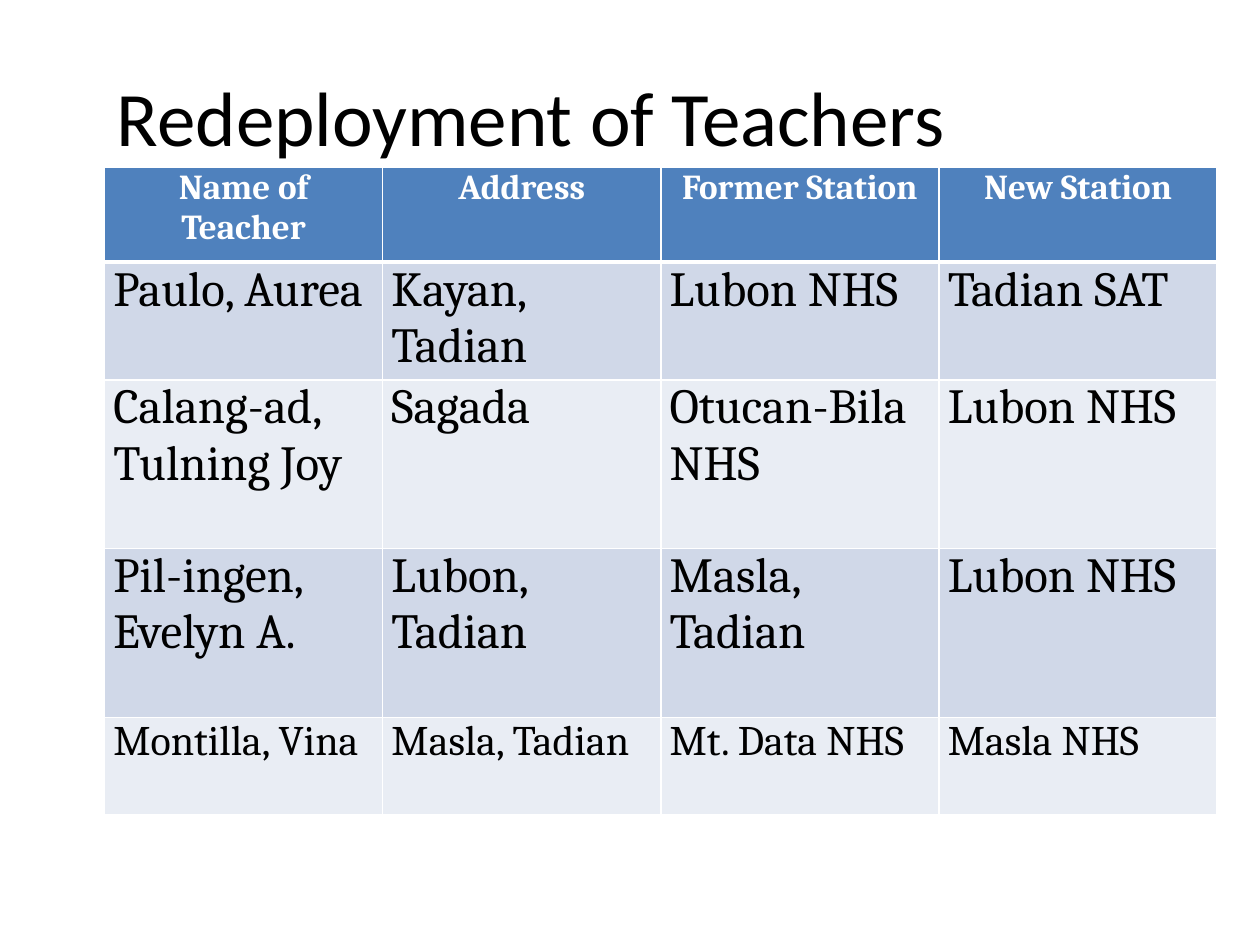
from pptx import Presentation
from pptx.dml.color import RGBColor
from pptx.enum.text import MSO_ANCHOR as Anchor, PP_ALIGN as Align
from pptx.oxml import parse_xml
from pptx.oxml.ns import nsdecls
from pptx.util import Inches, Pt

WHITE = RGBColor(0xFF, 0xFF, 0xFF)
BLACK = RGBColor(0x00, 0x00, 0x00)
HEADER_BLUE = RGBColor(0x4F, 0x81, 0xBD)
BAND_DARK = RGBColor(0xD0, 0xD8, 0xE8)
BAND_LIGHT = RGBColor(0xE9, 0xED, 0xF4)

TITLE_FONT = {"name": "Calibri", "size": Pt(44)}
HEADER_FONT = {"name": "Cambria", "size": Pt(20), "bold": True}
BODY_FONT = {"name": "Cambria", "size": Pt(28), "bold": False}
LAST_ROW_FONT = {**BODY_FONT, "size": Pt(24)}

LEFT, WIDTH = 0.83, 8.83
ROW_HEIGHTS = [0.75, 0.89, 1.34, 1.34, 0.77]
TEACHERS = [
    ["Name of Teacher", "Address", "Former Station", "New Station"],
    ["Paulo, Aurea", "Kayan, Tadian", "Lubon NHS", "Tadian SAT"],
    ["Calang-ad, Tulning Joy", "Sagada", "Otucan-Bila NHS", "Lubon NHS"],
    ["Pil-ingen, Evelyn A.", "Lubon, Tadian", "Masla, Tadian", "Lubon NHS"],
    ["Montilla, Vina", "Masla, Tadian", "Mt. Data NHS", "Masla NHS"],
]


def write_text(text_frame, text, font_format, color, alignment=Align.LEFT):
    paragraph = text_frame.paragraphs[0]
    paragraph.alignment = alignment
    run = paragraph.add_run()
    run.text = text
    for name, value in font_format.items():
        setattr(run.font, name, value)
    run.font.color.rgb = color


def add_title(slide, text):
    box = slide.shapes.add_textbox(Inches(LEFT), Inches(0.29), Inches(WIDTH), Inches(1.25))
    box.text_frame.word_wrap = True
    box.text_frame.vertical_anchor = Anchor.MIDDLE
    write_text(box.text_frame, text, TITLE_FONT, BLACK)


def set_borders(cell, widths):
    properties = cell._tc.get_or_add_tcPr()
    for side, width in widths.items():
        properties.append(parse_xml(
            f'<a:ln{side} {nsdecls("a")} w="{Pt(width)}"><a:solidFill>'
            f'<a:srgbClr val="{WHITE}"/></a:solidFill></a:ln{side}>'))


def format_cell(cell, fill, borders):
    margins = {"margin_left": 0.07, "margin_right": 0.07, "margin_top": 0, "margin_bottom": 0}
    for name, value in margins.items():
        setattr(cell, name, Inches(value))
    set_borders(cell, borders)
    cell.fill.solid()
    cell.fill.fore_color.rgb = fill


def row_style(index):
    """Return fill, font format, text colour and alignment of a row."""
    if index == 0:
        return HEADER_BLUE, HEADER_FONT, WHITE, Align.CENTER
    fill = BAND_DARK if index % 2 else BAND_LIGHT
    font_format = LAST_ROW_FONT if index == len(TEACHERS) - 1 else BODY_FONT
    return fill, font_format, BLACK, Align.LEFT


def add_teacher_table(slide):
    frame = slide.shapes.add_table(
        len(TEACHERS), len(TEACHERS[0]), Inches(LEFT), Inches(1.33),
        Inches(WIDTH), Inches(sum(ROW_HEIGHTS)))
    table = frame.table
    for index, (height, texts) in enumerate(zip(ROW_HEIGHTS, TEACHERS)):
        table.rows[index].height = Inches(height)
        fill, font_format, color, alignment = row_style(index)
        # The line under the header is thicker than the others
        borders = {"L": 1, "R": 1, "T": 3 if index == 1 else 1, "B": 3 if index == 0 else 1}
        for cell, text in zip(table.rows[index].cells, texts):
            format_cell(cell, fill, borders)
            write_text(cell.text_frame, text, font_format, color, alignment)


def main():
    presentation = Presentation()
    presentation.slide_width = Inches(10)
    presentation.slide_height = Inches(7.5)
    slide = presentation.slides.add_slide(presentation.slide_layouts[6])
    add_title(slide, "Redeployment of Teachers")
    add_teacher_table(slide)
    presentation.save("out.pptx")


if __name__ == "__main__":
    main()
